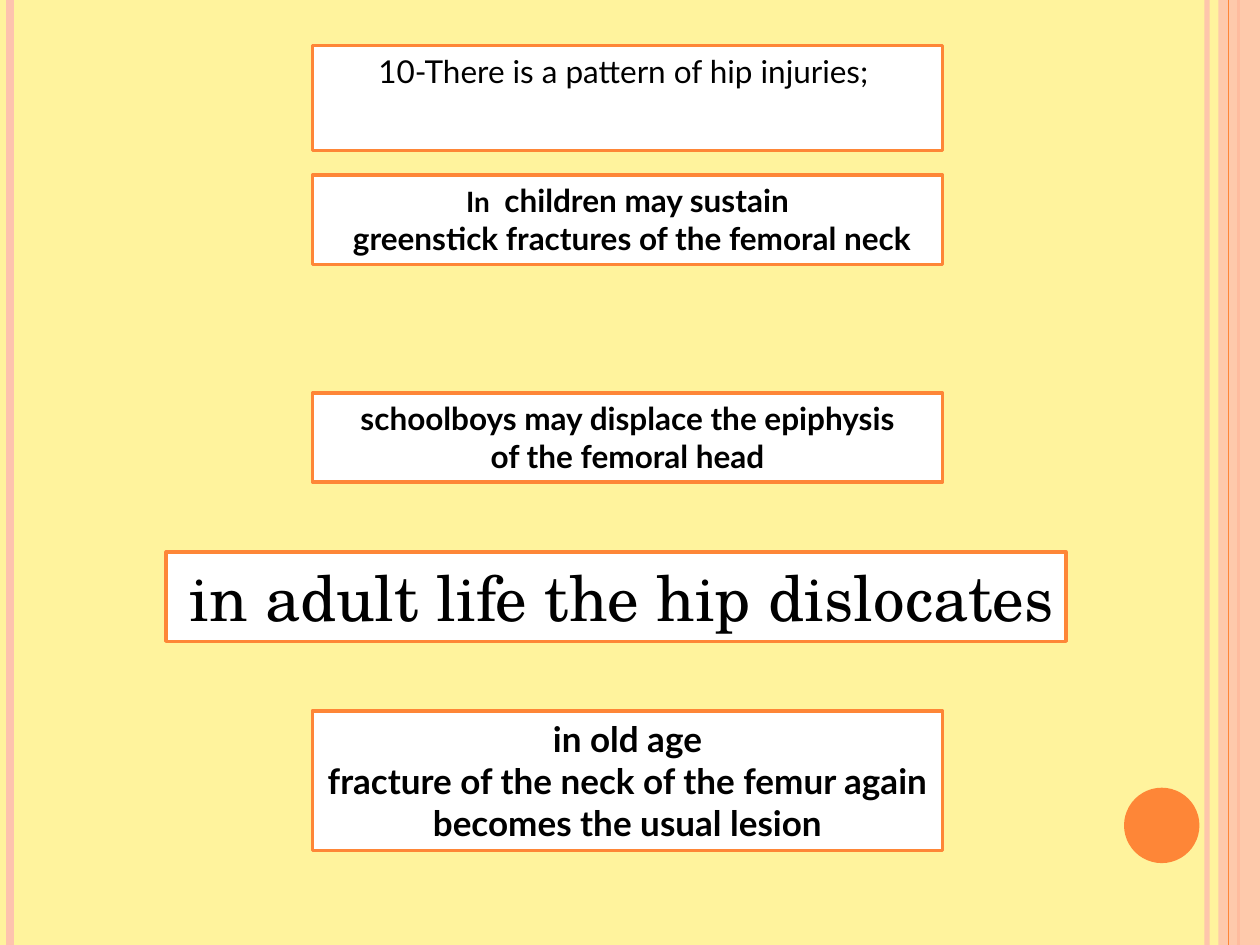
import pptx
import pptx.util
import pptx.dml.color
import pptx.enum.shapes
import pptx.enum.text
import pptx.oxml
import pptx.oxml.ns
from dataclasses import dataclass

Cm, Pt = pptx.util.Cm, pptx.util.Pt
Shape = pptx.enum.shapes.MSO_SHAPE
Align = pptx.enum.text.PP_ALIGN
NS = pptx.oxml.ns.nsdecls("a")


@dataclass
class Theme:
    back: str = "FFF39D"
    rose: str = "FEC3AE"
    flame: str = "FE8637"
    paper: str = "FFFFFF"
    ink: str = "000000"
    sans: str = "Lato"
    serif: str = "TeX Gyre Schola"
    small: int = 16
    text: int = 18
    large: int = 20
    huge: int = 36
    edge: float = 2


class Deck:
    def __init__(self, show, theme):
        self.theme = theme
        self.slide = show.slides.add_slide(show.slide_layouts[5])
        self.paint(self.slide.background.fill, theme.back)

    def paint(self, fill, color, alpha=100):
        fill.solid()
        fill.fore_color.rgb = pptx.dml.color.RGBColor.from_string(color)
        if alpha < 100:
            tone = fill._xPr.find(".//" + pptx.oxml.ns.qn("a:srgbClr"))
            tone.append(pptx.oxml.parse_xml(f'<a:alpha {NS} val="{alpha * 1000}"/>'))

    def stripe(self, x, color, width, alpha=100):
        """Draw a line down the full height of the slide."""
        line = self.slide.shapes.add_connector(
            pptx.enum.shapes.MSO_CONNECTOR.STRAIGHT, Cm(x), 0, Cm(x), Cm(19.05))
        self.paint(line.line.fill, color, alpha)
        line.line.width = Pt(width)
        line._element.spPr.append(pptx.oxml.parse_xml(f"<a:effectLst {NS}/>"))

    def block(self, kind, x, y, w, h, color, alpha=100):
        shape = self.slide.shapes.add_shape(kind, Cm(x), Cm(y), Cm(w), Cm(h))
        shape.shadow.inherit = False
        self.paint(shape.fill, color, alpha)
        shape.line.fill.background()

    def title(self, text, *place):
        self.dress(self.slide.shapes.title, [text], place, self.theme.text, bold=False)

    def box(self, lines, *place, **style):
        self.dress(self.slide.shapes.add_textbox(0, 0, 0, 0), lines, place, **style)

    def dress(self, shape, lines, place, size, font=None, bold=True,
              align=Align.CENTER, wrap=True, rtl=()):
        """Place a framed text; rtl holds the indexes of right-to-left lines."""
        shape.left, shape.top, shape.width, shape.height = map(Cm, place)
        self.paint(shape.fill, self.theme.paper)
        self.paint(shape.line.fill, self.theme.flame)
        shape.line.width = Pt(self.theme.edge)
        frame = shape.text_frame
        frame.text = "\n".join(lines)
        frame.word_wrap = wrap
        frame.auto_size = pptx.enum.text.MSO_AUTO_SIZE.SHAPE_TO_FIT_TEXT
        frame.vertical_anchor = pptx.enum.text.MSO_ANCHOR.TOP
        for row, para in enumerate(frame.paragraphs):
            para.alignment = align
            if row in rtl:
                para._p.get_or_add_pPr().set("rtl", "1")
            for run in para.runs:
                run.font.name = font or self.theme.sans
                run.font.size, run.font.bold = Pt(size), bold
                self.paint(run.font.fill, self.theme.ink)

    def lead(self, text):
        """Put a smaller run before the first line of the newest box."""
        first = self.slide.shapes[-1].text_frame.paragraphs[0]
        rest = first.runs[0]
        run = first.add_run()
        run.text = text
        run.font.name, run.font.bold = self.theme.sans, True
        run.font.size = Pt(self.theme.small)
        self.paint(run.font.fill, self.theme.ink)
        rest._r.addprevious(run._r)


def main():
    show = pptx.Presentation()
    show.slide_width, show.slide_height = Cm(25.4), Cm(19.05)
    theme = Theme()
    deck = Deck(show, theme)

    # Side stripes and page dot
    deck.stripe(24.33, theme.rose, 3, 93)
    deck.stripe(0.2, theme.rose, 4.5)
    deck.stripe(24.97, theme.flame, 1.5)
    deck.block(Shape.RECTANGLE, 24.56, 0, 0.84, 19.05, theme.rose, 87)
    deck.stripe(24.77, theme.flame, 0.75)
    deck.block(Shape.OVAL, 22.66, 15.88, 1.52, 1.52, theme.flame)

    # Heading
    left, wide = 6.3, 12.7
    deck.title("10-There is a pattern of hip injuries; ", left, 0.92, wide, 1.02)

    # Injuries by age
    deck.box([" children may sustain", "greenstick fractures of the femoral neck "],
             left, 3.53, wide, 1.8, size=theme.text, rtl=[1])
    deck.lead("In ")
    deck.box(["schoolboys may displace the epiphysis", "of the femoral head"],
             left, 7.92, wide, 1.8, size=theme.text, rtl=[0, 1])
    deck.box(["in adult life the hip dislocates"], 3.35, 11.13, 18.14, 1.8,
             size=theme.huge, font=theme.serif, bold=False,
             align=Align.RIGHT, wrap=False, rtl=[0])
    deck.box(["in old age",
              "fracture of the neck of the femur again becomes the usual lesion"],
             left, 14.33, wide, 2.82, size=theme.large, rtl=[1])

    show.save("out.pptx")


if __name__ == "__main__":
    main()
